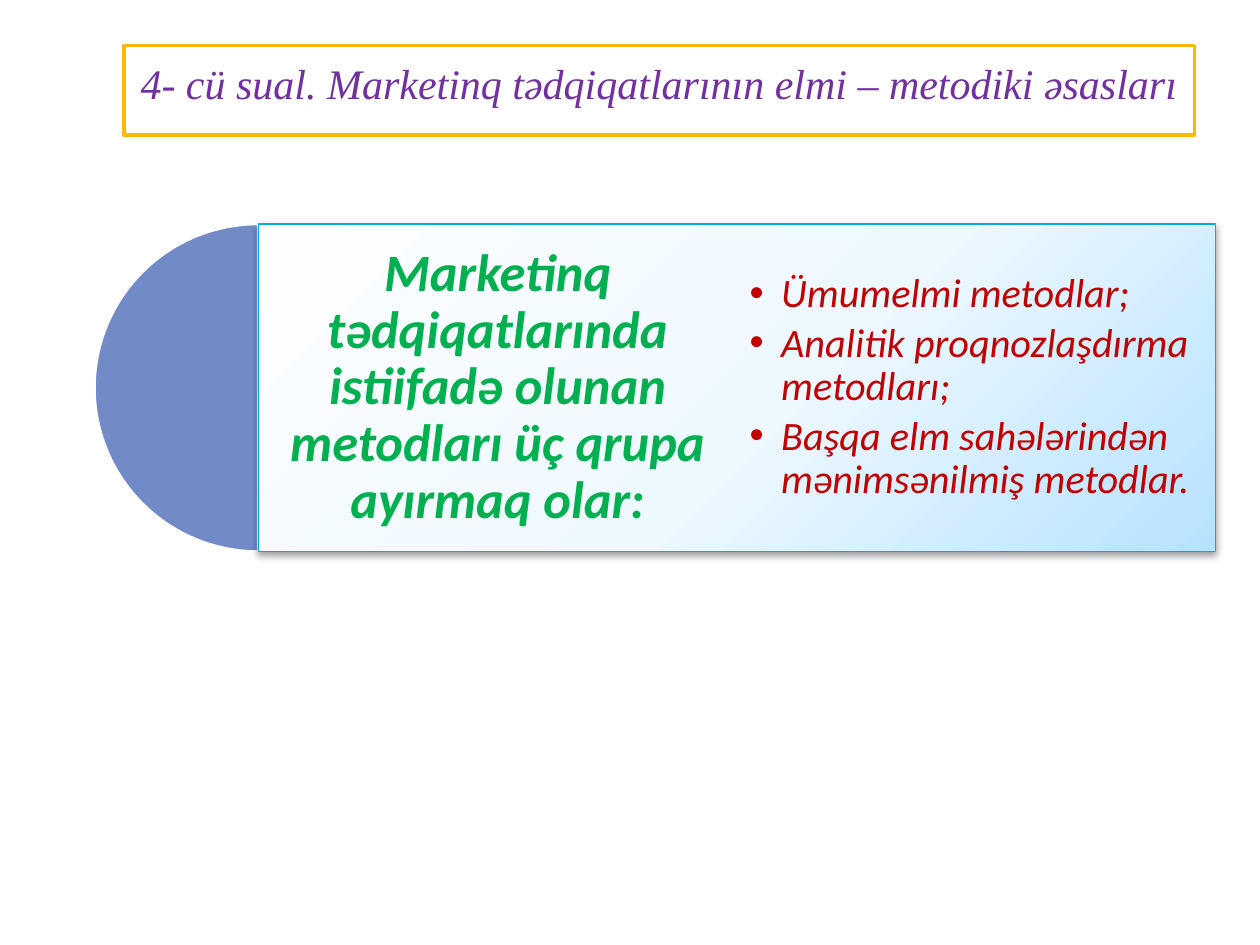
import pptx
import pptx.util
import pptx.dml.color
import pptx.enum.shapes
import pptx.enum.text
import pptx.oxml
import pptx.oxml.ns

Pt = pptx.util.Pt
RGB = pptx.dml.color.RGBColor
KIND = pptx.enum.shapes.MSO_SHAPE
ALIGN = pptx.enum.text.PP_ALIGN
ANCHOR = pptx.enum.text.MSO_ANCHOR

WHITE = RGB(0xFF, 0xFF, 0xFF)
GOLD = RGB(0xFE, 0xB8, 0x0A)
PURPLE = RGB(0x70, 0x30, 0xA0)
BLUE = RGB(0x73, 0x8A, 0xC8)
CYAN = RGB(0x00, 0xAD, 0xDC)
GREEN = RGB(0x00, 0xB0, 0x50)
RED = RGB(0xC0, 0x00, 0x00)
BLACK = RGB(0x00, 0x00, 0x00)
STOPS = [(0, RGB(0xFE, 0xFE, 0xFF)), (55, RGB(0xED, 0xF8, 0xFF)),
         (100, RGB(0xB6, 0xE2, 0xFF))]

LEFT, TOP, SIZE = 54, 128, 187.2
EDGE = LEFT + SIZE / 2
WIDTH = 547.2
HALF = WIDTH / 2

HEAD = "4- cü sual. Marketinq tədqiqatlarının elmi – metodiki əsasları"
CLAIM = "Marketinq tədqiqatlarında istiifadə olunan metodları üç qrupa ayırmaq olar:"
ITEMS = ["Ümumelmi metodlar;", "Analitik proqnozlaşdırma metodları;",
         "Başqa elm sahələrindən mənimsənilmiş metodlar."]


def node(xml):
    space = pptx.oxml.ns.nsdecls("a")
    return pptx.oxml.parse_xml(xml.replace(">", f" {space}>", 1))


def place(shape, x, y, w, h):
    shape.left, shape.top, shape.width, shape.height = map(Pt, (x, y, w, h))


def paint(shape, fill, line, width):
    shape.fill.solid()
    shape.fill.fore_color.rgb = fill
    shape.line.color.rgb = line
    shape.line.width = Pt(width)


def frame(shape, anchor, side, top):
    text = shape.text_frame
    text.word_wrap = True
    text.auto_size = pptx.enum.text.MSO_AUTO_SIZE.NONE
    text.vertical_anchor = anchor
    text.margin_left = text.margin_right = Pt(side)
    text.margin_top = text.margin_bottom = Pt(top)
    return text


def write(para, words, font, size, color, bold=False, lead=1.0, after=0):
    para.line_spacing = lead
    para.space_before = Pt(0)
    para.space_after = Pt(after)
    run = para.add_run()
    run.text = words
    run.font.name = font
    run.font.size = Pt(size)
    run.font.color.rgb = color
    run.font.bold = bold
    run.font.italic = True


def bullet(para):
    props = para._p.get_or_add_pPr()
    props.set("marL", str(Pt(18)))
    props.set("indent", str(-Pt(18)))
    props.append(node('<a:buChar char="•"></a:buChar>'))


def blend(shape):
    stops = "".join(f'<a:gs pos="{at * 1000}"><a:srgbClr val="{color}"/></a:gs>'
                    for at, color in STOPS)
    grad = node(f'<a:gradFill rotWithShape="1"><a:gsLst>{stops}</a:gsLst>'
                '<a:path path="circle"><a:fillToRect l="-40000" t="-90000" '
                'r="140000" b="190000"/></a:path></a:gradFill>')
    props = shape._element.spPr
    old = props.find(pptx.oxml.ns.qn("a:solidFill"))
    props.replace(old, grad)


def shade(shape):
    shape.shadow.inherit = False
    effect = shape._element.spPr.find(pptx.oxml.ns.qn("a:effectLst"))
    effect.append(node(
        f'<a:outerShdw blurRad="{Pt(4.1)}" dist="{Pt(2)}" dir="5400000" '
        f'rotWithShape="0"><a:srgbClr val="{BLACK}"><a:alpha val="40000"/>'
        '</a:srgbClr></a:outerShdw>'))


def title(slide):
    shape = slide.shapes.title
    place(shape, 70.6, 26, 612, 51)
    paint(shape, WHITE, GOLD, 2.25)
    para = frame(shape, ANCHOR.TOP, 4, 7).paragraphs[0]
    para.alignment = ALIGN.CENTER
    write(para, HEAD, "Times New Roman", 24, PURPLE)


def disc(slide):
    shape = slide.shapes.add_shape(KIND.PIE, Pt(LEFT), Pt(TOP), Pt(SIZE), Pt(SIZE))
    shape.adjustments[0] = 54
    shape.adjustments[1] = 162
    shape.shadow.inherit = False
    paint(shape, BLUE, WHITE, 1.5)


def panel(slide):
    shape = slide.shapes.add_shape(KIND.RECTANGLE, Pt(EDGE), Pt(TOP), Pt(WIDTH), Pt(SIZE))
    paint(shape, WHITE, CYAN, 0.75)
    blend(shape)
    shade(shape)


def claim(slide):
    shape = slide.shapes.add_textbox(Pt(EDGE), Pt(TOP), Pt(HALF), Pt(SIZE))
    para = frame(shape, ANCHOR.MIDDLE, 8.64, 8.64).paragraphs[0]
    para.alignment = ALIGN.CENTER
    write(para, CLAIM, "Calibri", 30, GREEN, True, 0.9, 10.5)


def points(slide):
    shape = slide.placeholders[1]
    place(shape, EDGE + HALF, TOP, HALF, SIZE)
    slide.shapes._spTree.append(shape._element)
    text = frame(shape, ANCHOR.MIDDLE, 7.2, 7.2)
    for i, item in enumerate(ITEMS):
        para = text.add_paragraph() if i else text.paragraphs[0]
        para.level = 1
        write(para, item, "Calibri", 23, RED, lead=0.9, after=3.45)
        bullet(para)


def main():
    deck = pptx.Presentation()
    deck.slide_width, deck.slide_height = Pt(720), Pt(540)
    slide = deck.slides.add_slide(deck.slide_layouts[1])
    for build in (title, disc, panel, claim, points):
        build(slide)
    deck.save("out.pptx")


if __name__ == "__main__":
    main()
